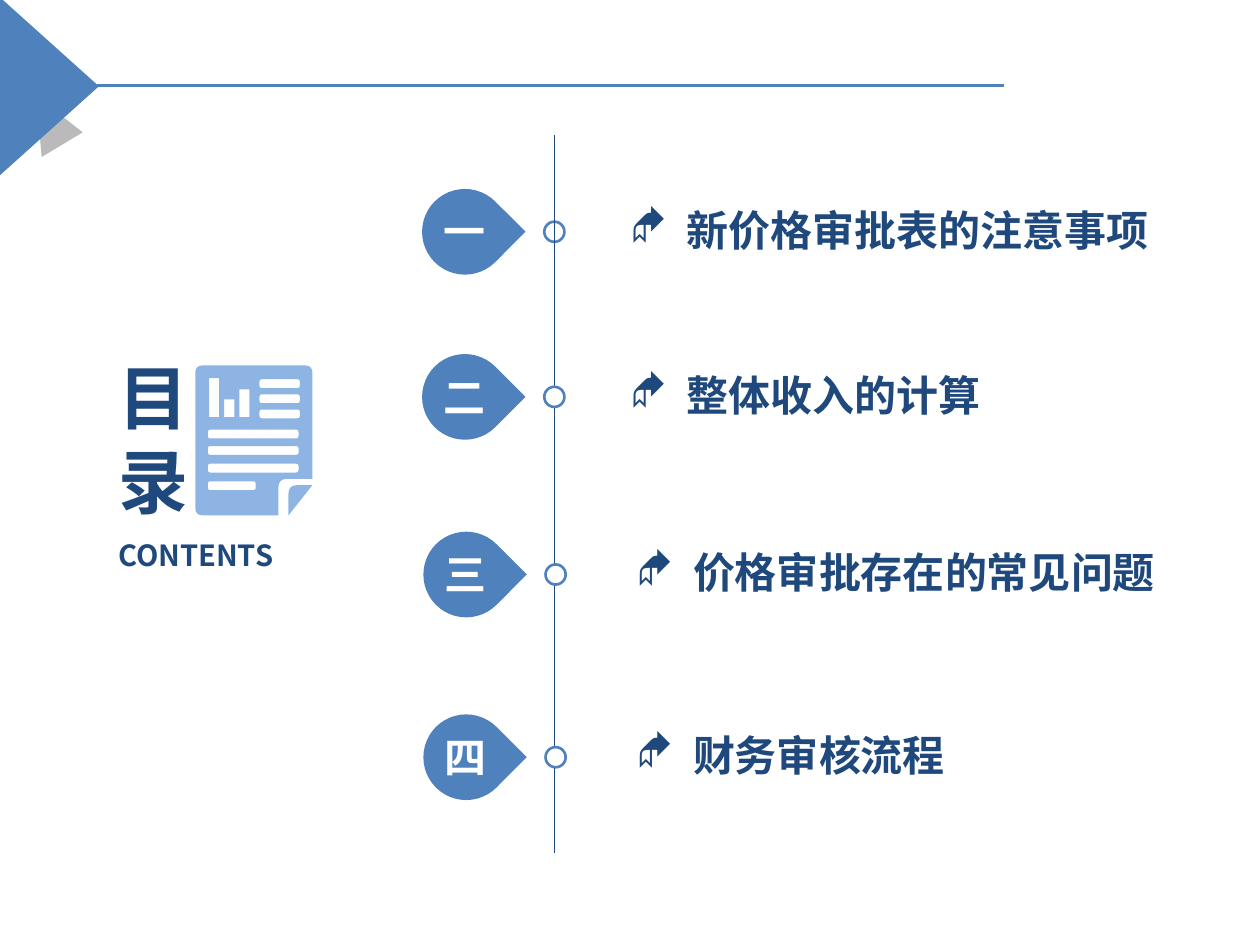
from dataclasses import dataclass
from math import hypot

from lxml.etree import SubElement
from pptx import Presentation
from pptx.dml.color import RGBColor
from pptx.enum.shapes import MSO_CONNECTOR, MSO_SHAPE as SHAPE
from pptx.enum.text import MSO_ANCHOR as ANCHOR, PP_ALIGN as ALIGN
from pptx.oxml.ns import qn
from pptx.util import Inches, Pt

FONT = "Noto Sans CJK SC"
BULLET_FONT = "Wingdings"
COLORS = {
    "blue": "4F81BD",
    "navy": "1F497D",
    "light": "8EB4E3",
    "shade": "404040",
    "white": "FFFFFF",
}


@dataclass
class Topic:
    numeral: str
    title: str
    x: float
    y: float
    title_x: float


TOPICS = [
    Topic("一", "新价格审批表的注意事项", 3.35, 1.5, 5),
    Topic("二", "整体收入的计算", 3.35, 2.81, 5),
    Topic("三", "价格审批存在的常见问题", 3.36, 4.22, 5.05),
    Topic("四", "财务审核流程", 3.36, 5.67, 5.05),
]


def rgb(name: str) -> RGBColor:
    return RGBColor.from_string(COLORS[name])


def add_shape(shapes, kind, x: float, y: float, w: float, h: float,
              fill: str = "", line: str = "", rotation: float = 0):
    sp = shapes.add_shape(kind, Inches(x), Inches(y), Inches(w), Inches(h))
    sp.shadow.inherit = False
    sp.rotation = rotation
    if fill:
        sp.fill.solid()
        sp.fill.fore_color.rgb = rgb(fill)
    else:
        sp.fill.background()
    if line:
        sp.line.color.rgb = rgb(line)
        sp.line.width = Pt(1.5)
    else:
        sp.line.fill.background()
    return sp


def add_line(shapes, x1: float, y1: float, x2: float, y2: float,
             color: str, width: float) -> None:
    cn = shapes.add_connector(MSO_CONNECTOR.STRAIGHT, Inches(x1), Inches(y1),
                              Inches(x2), Inches(y2))
    cn.line.color.rgb = rgb(color)
    cn.line.width = Pt(width)
    SubElement(cn._element.spPr, qn("a:effectLst"))


def set_text(sp, text: str, size: float, color: str, align, anchor, wrap: bool):
    tf = sp.text_frame
    tf.word_wrap = wrap
    tf.vertical_anchor = anchor
    p = tf.paragraphs[0]
    p.text = text
    p.alignment = align
    font = p.runs[0].font
    font.name, font.size, font.bold = FONT, Pt(size), True
    font.color.rgb = rgb(color)
    pr = p.runs[0]._r.get_or_add_rPr()
    SubElement(pr, qn("a:ea")).set("typeface", FONT)
    return p


def add_text(shapes, x: float, y: float, w: float, h: float, text: str,
             size: float, align, anchor, wrap: bool = True):
    tb = shapes.add_textbox(Inches(x), Inches(y), Inches(w), Inches(h))
    tf = tb.text_frame
    tf.margin_left = tf.margin_right = tf.margin_top = tf.margin_bottom = 0
    return set_text(tb, text, size, "navy", align, anchor, wrap)


def add_topic(slide, t: Topic) -> None:
    # Marker: dot on the timeline, drop and numeral
    marker = slide.shapes.add_group_shape().shapes
    add_shape(marker, SHAPE.OVAL, t.x + 0.97, t.y + 0.26, 0.16, 0.16, "white", "blue")
    add_shape(marker, SHAPE.TEAR, t.x, t.y, 0.68, 0.68, "blue", rotation=44.9)
    disc = add_shape(marker, SHAPE.OVAL, t.x + 0.01, t.y + 0.01, 0.65, 0.65)
    set_text(disc, t.numeral, 24, "white", ALIGN.CENTER, ANCHOR.MIDDLE, False)
    # Bulleted title
    p = add_text(slide.shapes, t.title_x, t.y + 0.13, 4.25, 0.39, t.title, 24,
                 ALIGN.LEFT, ANCHOR.BOTTOM)
    pr = p._p.get_or_add_pPr()
    pr.set("marL", str(Inches(0.45)))
    pr.set("indent", str(-Inches(0.45)))
    SubElement(pr, qn("a:buFont")).set("typeface", BULLET_FONT)
    SubElement(pr, qn("a:buChar")).set("char", "◆")


def rounded(corners: list[tuple[float, float, float]]) -> list[tuple[int, int]]:
    """Outline points for (x, y, radius) corners, each rounded by a curve."""
    points = []
    for i, (x, y, radius) in enumerate(corners):
        if not radius:
            points.append((Inches(x), Inches(y)))
            continue
        ends = []
        for nx, ny, _ in (corners[i - 1], corners[(i + 1) % len(corners)]):
            f = radius / hypot(nx - x, ny - y)
            ends.append((x + (nx - x) * f, y + (ny - y) * f))
        (ax, ay), (bx, by) = ends
        for t in (0, 0.25, 0.5, 0.75, 1):
            a, c, b = (1 - t) ** 2, 2 * t * (1 - t), t * t
            points.append((Inches(a * ax + c * x + b * bx),
                           Inches(a * ay + c * y + b * by)))
    return points


def box(x1: float, y1: float, x2: float, y2: float, radius: float = 0):
    return rounded([(x1, y1, radius), (x2, y1, radius),
                    (x2, y2, radius), (x1, y2, radius)])


def add_report_icon(shapes) -> None:
    sheet = rounded([(1.55, 2.9, 0.06), (2.48, 2.9, 0.06), (2.48, 3.8, 0),
                     (2.21, 3.8, 0.07), (2.21, 4.09, 0), (1.55, 4.09, 0.06)])
    fold = rounded([(2.48, 3.85, 0), (2.29, 4.09, 0), (2.29, 3.85, 0.07)])
    bars = [box(x, y, x + 0.08, 3.31) for x, y in ((1.66, 3), (1.78, 3.17), (1.9, 3.09))]
    short_lines = [box(2.06, y, 2.38, y + 0.07, 0.02) for y in (3.01, 3.13, 3.25)]
    long_lines = [box(1.65, y, x, y + 0.07, 0.02)
                  for y, x in ((3.41, 2.37), (3.54, 2.37), (3.68, 2.37), (3.82, 2.03))]
    fb = shapes.build_freeform(*sheet[0])
    fb.add_line_segments(sheet[1:])
    for outline in [fold, *bars, *short_lines, *long_lines]:
        fb.move_to(*outline[0])
        fb.add_line_segments(outline[1:])
    sp = fb.convert_to_shape()
    sp.shadow.inherit = False
    sp.fill.solid()
    sp.fill.fore_color.rgb = rgb("light")
    sp.line.fill.background()


def main() -> None:
    prs = Presentation()
    prs.slide_width, prs.slide_height = Inches(10), Inches(7.5)
    s = prs.slides.add_slide(prs.slide_layouts[6])

    # Corner arrow, its shade and the header rule
    shade = add_shape(s.shapes, SHAPE.ISOSCELES_TRIANGLE, 0.19, 0.74, 0.38, 0.44,
                      "shade", rotation=329)
    shade.adjustments[0] = 0.56
    color = shade._element.spPr.find(qn("a:solidFill"))[0]
    SubElement(color, qn("a:alpha")).set("val", "36000")
    add_shape(s.shapes, SHAPE.ISOSCELES_TRIANGLE, -0.32, 0.29, 1.42, 0.79,
              "blue", rotation=90)
    add_line(s.shapes, 0.77, 0.68, 7.97, 0.68, "blue", 2)

    # Topics along the timeline, which crosses the first dot
    add_topic(s, TOPICS[0])
    add_line(s.shapes, 4.4, 1.07, 4.4, 6.77, "navy", 0.75)
    for topic in TOPICS[1:]:
        add_topic(s, topic)

    # Contents heading
    heading = s.shapes.add_group_shape().shapes
    add_text(heading, 0.94, 4.27, 1.54, 0.27, "CONTENTS", 16.6,
             ALIGN.JUSTIFY, ANCHOR.MIDDLE)
    add_text(heading, 0.94, 2.81, 0.49, 1.38, "目录", 40, ALIGN.CENTER, ANCHOR.TOP)
    add_report_icon(heading)

    prs.save("out.pptx")


if __name__ == "__main__":
    main()
